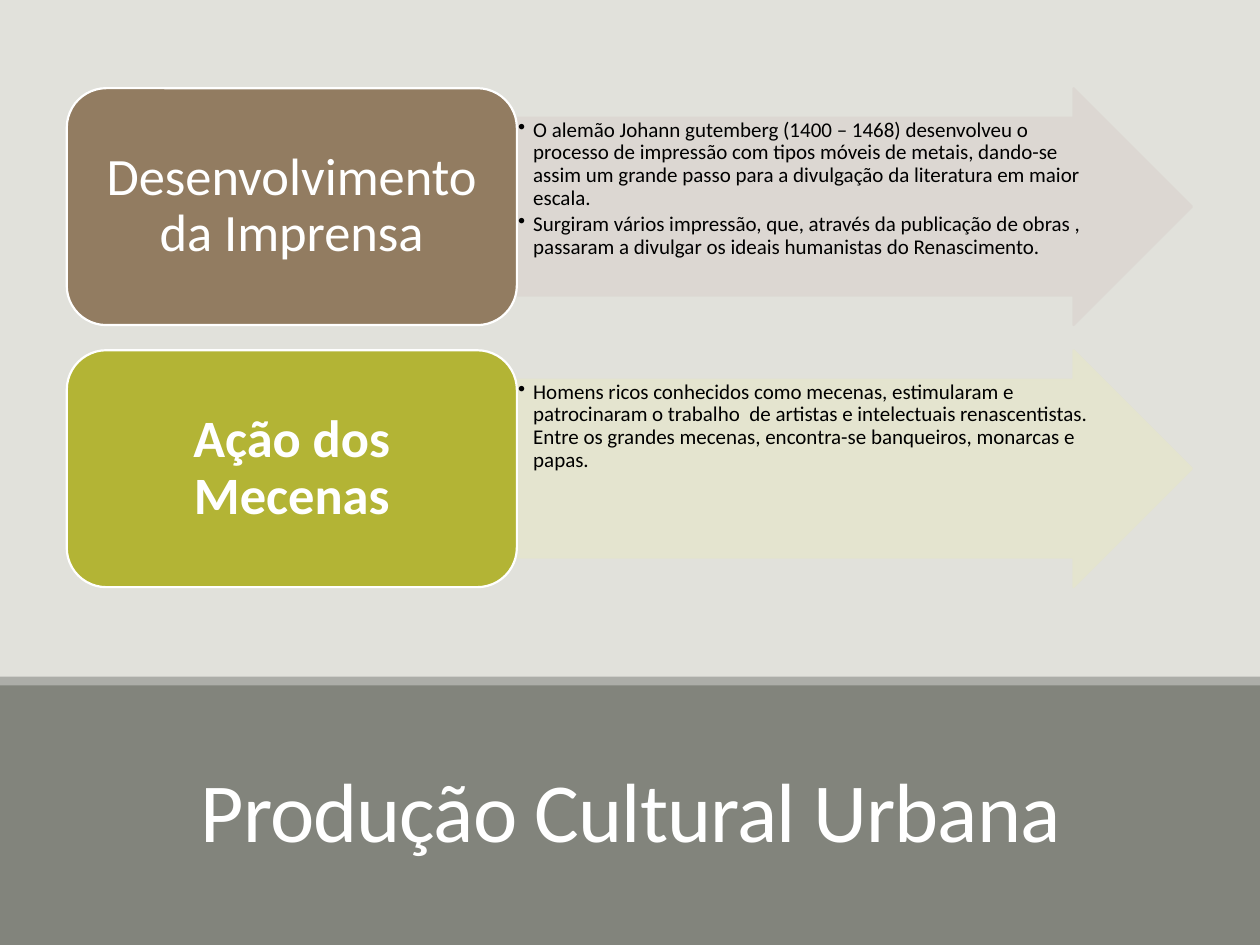
from lxml import etree
from pptx import Presentation
from pptx.dml.color import RGBColor
from pptx.enum.shapes import MSO_SHAPE
from pptx.enum.text import MSO_ANCHOR, MSO_AUTO_SIZE, PP_ALIGN
from pptx.oxml.ns import qn
from pptx.util import Inches, Pt

RECT, ROUND, ARROW = (MSO_SHAPE.RECTANGLE, MSO_SHAPE.ROUNDED_RECTANGLE,
                      MSO_SHAPE.RIGHT_ARROW)
TOP, MIDDLE, BOTTOM = MSO_ANCHOR.TOP, MSO_ANCHOR.MIDDLE, MSO_ANCHOR.BOTTOM
LEFT, CENTER = PP_ALIGN.LEFT, PP_ALIGN.CENTER
NO_FIT = MSO_AUTO_SIZE.NONE

FONT = "Calibri"
WHITE, BLACK = "FFFFFF", "000000"
PAPER, BAND, STRIPE = "E1E1DB", "82847C", "ACADA8"

# label, bold, label colour, arrow colour, points
ROWS = [
    ("Desenvolvimento da Imprensa", False, "927C61", "DCD7D2", [
        "O alemão Johann gutemberg (1400 – 1468) desenvolveu o processo de "
        "impressão com tipos móveis de metais, dando-se assim um grande passo "
        "para a divulgação da literatura em maior escala.",
        "Surgiram vários impressão, que, através da publicação de obras , "
        "passaram a divulgar os ideais humanistas do Renascimento."]),
    ("Ação dos Mecenas", True, "B3B435", "E5E5CE", [
        "Homens ricos conhecidos como mecenas, estimularam e patrocinaram o "
        "trabalho  de artistas e intelectuais renascentistas. Entre os grandes "
        "mecenas, encontra-se banqueiros, monarcas e papas."]),
]


def paint(fmt, color):
    """Give a fill a solid colour."""
    fmt.solid()
    fmt.fore_color.rgb = RGBColor.from_string(color)


def fade(shape, percent):
    """Make the fill and line of a shape partly transparent."""
    for node in shape.element.spPr.iter(qn("a:srgbClr")):
        etree.SubElement(node, qn("a:alpha"), val=str(percent * 1000))


def add_form(slide, kind, box, color, edge=None):
    shape = slide.shapes.add_shape(kind, *map(Inches, box))
    shape.shadow.inherit = False
    paint(shape.fill, color)
    if edge:
        paint(shape.line.fill, edge)
        shape.line.width = Pt(1.25)
    else:
        shape.line.fill.background()
    return shape


def set_frame(shape, anchor, side, edge):
    frame = shape.text_frame
    frame.word_wrap = True
    frame.auto_size = NO_FIT
    frame.vertical_anchor = anchor
    frame.margin_left = frame.margin_right = Inches(side)
    frame.margin_top = frame.margin_bottom = Inches(edge)
    return frame


def write(para, text, size, color, align, space=0.9, bold=False):
    para.alignment = align
    para.line_spacing = space
    run = para.add_run()
    run.text = text
    run.font.name = FONT
    run.font.size = Pt(size)
    run.font.bold = bold
    run.font.color.rgb = RGBColor.from_string(color)
    return run


def add_bullet(para):
    props = para._p.get_or_add_pPr()
    props.set("marL", str(Inches(0.12)))
    props.set("indent", str(-Inches(0.12)))
    etree.SubElement(props, qn("a:buChar"), char="•")


def add_row(slide, box, row):
    """Label on the left, arrow with bulleted points on the right."""
    label, bold, color, tint, points = row
    left, top, width, height = box
    split = width * 0.4

    # Arrow with its points
    arrow = add_form(slide, ARROW, (left + split, top, width - split, height),
                     tint, tint)
    arrow.adjustments[0], arrow.adjustments[1] = 0.75, 0.5
    fade(arrow, 90)
    frame = set_frame(arrow, TOP, 0.01, 0.01)
    for i, point in enumerate(points):
        para = frame.add_paragraph() if i else frame.paragraphs[0]
        write(para, point, 12, BLACK, LEFT)
        para.space_after = Pt(2)
        add_bullet(para)

    # Label
    block = add_form(slide, ROUND, (left, top, split, height), color, WHITE)
    frame = set_frame(block, MIDDLE, 0.12, 0.06)
    write(frame.paragraphs[0], label, 30, WHITE, CENTER, bold=bold)


def add_rows(slide, box):
    left, top, width, height = box
    gap = 0.2
    tall = (height - gap * (len(ROWS) - 1)) / len(ROWS)
    for i, row in enumerate(ROWS):
        add_row(slide, (left, top + i * (tall + gap), width, tall), row)


def add_footer(slide, box):
    """Dark band with a stripe on its upper edge and the slide title."""
    left, top, width, height = box
    add_form(slide, RECT, box, BAND)
    add_form(slide, RECT, (left, top - 0.05, width, 0.07), STRIPE)

    title = slide.shapes.title
    title.left, title.top = Inches(left + 0.88), Inches(top + 0.32)
    title.width, title.height = Inches(8.25), Inches(1.13)
    frame = set_frame(title, BOTTOM, 0.1, 0.05)
    run = write(frame.paragraphs[0], "Produção Cultural Urbana", 48, WHITE,
                CENTER, 0.85)
    run.font._element.set("spc", "-50")
    slide.shapes.element.append(title.element)  # in front of the band


def main():
    deck = Presentation()
    deck.slide_width, deck.slide_height = Inches(10), Inches(7.5)
    slide = deck.slides.add_slide(deck.slide_layouts[5])
    paint(slide.background.fill, PAPER)
    add_rows(slide, (0.53, 0.7, 8.93, 3.96))
    add_footer(slide, (0, 5.42, 10, 2.08))
    deck.save("out.pptx")


if __name__ == "__main__":
    main()
